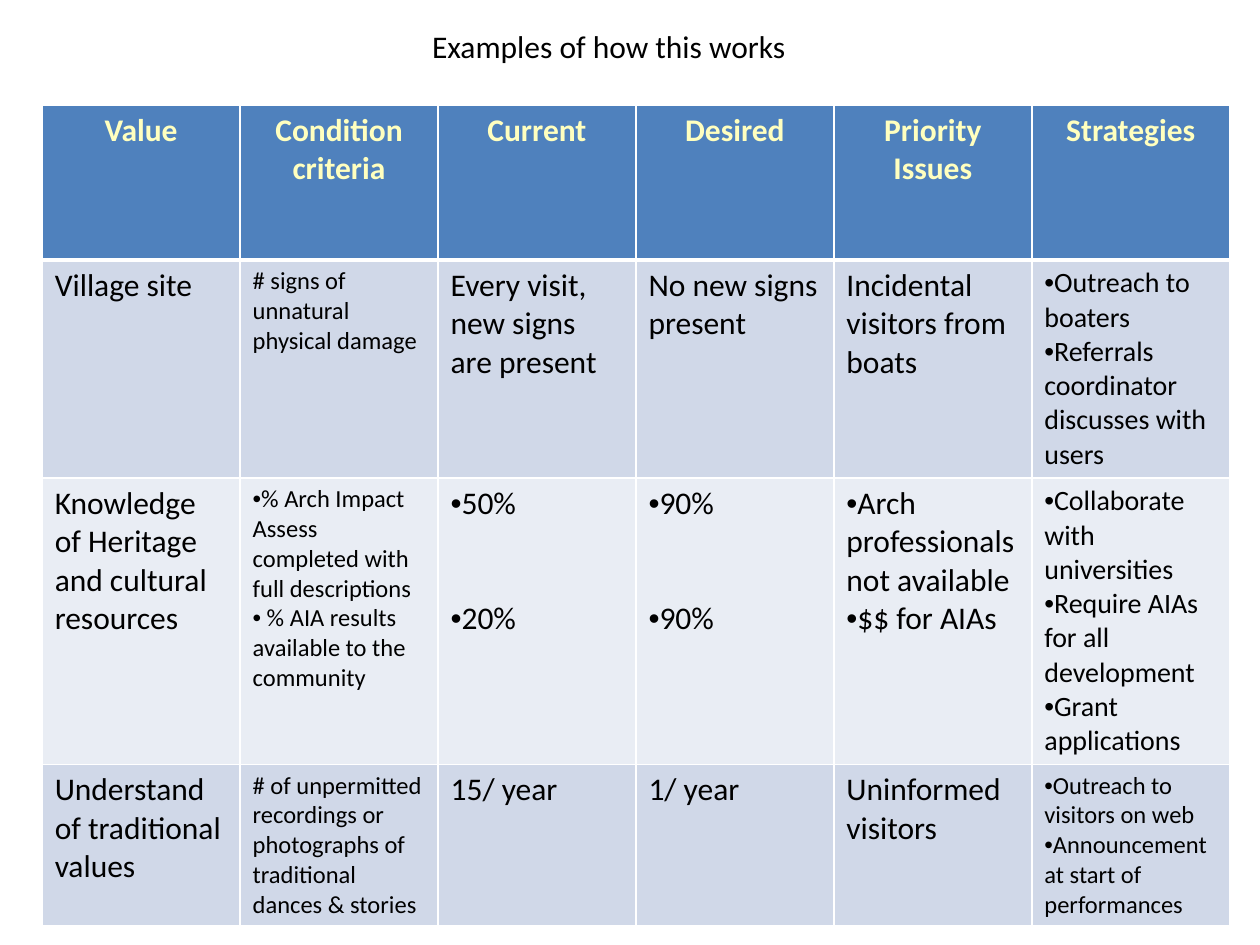
from dataclasses import dataclass

from lxml.etree import SubElement
from pptx import Presentation
from pptx.dml.color import RGBColor as Rgb
from pptx.enum.text import MSO_AUTO_SIZE as AutoSize, PP_ALIGN as Align
from pptx.oxml.ns import qn
from pptx.util import Cm, Pt


@dataclass(frozen=True)
class Theme:
    font: str = "Calibri"
    text: str = "000000"
    page: str = "FFFFFF"
    rule: str = "FFFFFF"
    header_text: str = "FFFFBF"
    header_fill: str = "4F81BD"
    bands: tuple = ("D0D8E8", "E9EDF4")
    size: int = 18
    thin: int = 1
    thick: int = 3
    bullet_gap: int = 44  # two empty lines at the main size


THEME = Theme()

TITLE = "Examples of how this works"
HEADERS = ["Value", "Condition criteria", "Current", "Desired", "Priority Issues", "Strategies"]
# A string is plain text; a list is bulleted.
ROWS = [
    ["Village site",
     "# signs of unnatural physical damage",
     "Every visit, new signs are present",
     "No new signs present",
     "Incidental visitors from boats",
     ["Outreach to boaters", "Referrals coordinator discusses with users"]],
    ["Knowledge of Heritage and cultural resources",
     ["% Arch Impact Assess completed with full descriptions",
      " % AIA results available to the community"],
     ["50%", "20%"],
     ["90%", "90%"],
     ["Arch professionals not available", "$$ for AIAs"],
     ["Collaborate with universities", "Require AIAs for all development",
      "Grant applications"]],
    ["Understand of traditional values",
     "# of unpermitted recordings or photographs of traditional dances & stories",
     "15/ year",
     "1/ year",
     "Uninformed visitors",
     ["Outreach to visitors on web", "Announcement at start of performances"]],
]
CRITERIA, CURRENT, DESIRED, STRATEGIES = 1, 2, 3, 5
CRITERIA_SIZE = 14
STRATEGY_SIZES = [16, 16, 14]

COLUMN_WIDTH = 3.99
ROW_HEIGHTS = [3.12, 2.97, 1.8, 1.8]
TABLE_LEFT, TABLE_TOP, TABLE_HEIGHT = 0.85, 2.12, 16.33


def set_font(paragraph, size, color, bold=False):
    font = paragraph.font
    font.name, font.size, font.bold = THEME.font, Pt(size), bold
    font.color.rgb = Rgb.from_string(color)


def add_bullet(paragraph):
    """Put the bullet directly before the text, with no hanging indent."""
    properties = paragraph._p.get_or_add_pPr()
    properties.set("marL", "0")
    properties.set("indent", "0")
    SubElement(properties, qn("a:buFont"), typeface="Arial")
    SubElement(properties, qn("a:buChar"), char="•")


def style_cell(cell, fill, top, bottom):
    """Draw the four borders, then the fill, in the order the schema asks for."""
    properties = cell._tc.get_or_add_tcPr()
    widths = {"L": THEME.thin, "R": THEME.thin, "T": top, "B": bottom}
    for side, width in widths.items():
        line = SubElement(properties, qn(f"a:ln{side}"), w=str(Pt(width)))
        SubElement(SubElement(line, qn("a:solidFill")), qn("a:srgbClr"), val=THEME.rule)
    cell.fill.solid()
    cell.fill.fore_color.rgb = Rgb.from_string(fill)


def fill_body_cell(cell, content, size, gap):
    bulleted = isinstance(content, list)
    items = content if bulleted else [content]
    cell.text = "\n".join(items)
    for index, paragraph in enumerate(cell.text_frame.paragraphs):
        if index and gap:
            paragraph.space_before = Pt(gap)
        if bulleted:
            add_bullet(paragraph)
        set_font(paragraph, size, THEME.text)


def add_title(page):
    box = page.shapes.add_textbox(Cm(8.46), Cm(0.43), Cm(7.72), Cm(1.02))
    frame = box.text_frame
    frame.word_wrap = False
    frame.auto_size = AutoSize.SHAPE_TO_FIT_TEXT
    frame.text = TITLE
    set_font(frame.paragraphs[0], THEME.size, THEME.text)


def add_values_table(page):
    holder = page.shapes.add_table(
        len(ROWS) + 1, len(HEADERS), Cm(TABLE_LEFT), Cm(TABLE_TOP),
        Cm(COLUMN_WIDTH * len(HEADERS)), Cm(TABLE_HEIGHT))
    table = holder.table
    for column in table.columns:
        column.width = Cm(COLUMN_WIDTH)
    for row, height in zip(table.rows, ROW_HEIGHTS):
        row.height = Cm(height)
    holder.height = Cm(TABLE_HEIGHT)

    for column, header in enumerate(HEADERS):
        cell = table.cell(0, column)
        cell.text = header
        paragraph = cell.text_frame.paragraphs[0]
        paragraph.alignment = Align.CENTER
        set_font(paragraph, THEME.size, THEME.header_text, bold=True)
        style_cell(cell, THEME.header_fill, THEME.thin, THEME.thick)

    for row, contents in enumerate(ROWS):
        sizes = {CRITERIA: CRITERIA_SIZE, STRATEGIES: STRATEGY_SIZES[row]}
        band = THEME.bands[row % len(THEME.bands)]
        top = THEME.thin if row else THEME.thick
        for column, content in enumerate(contents):
            cell = table.cell(row + 1, column)
            gap = THEME.bullet_gap if column in (CURRENT, DESIRED) else 0
            fill_body_cell(cell, content, sizes.get(column, THEME.size), gap)
            style_cell(cell, band, top, THEME.thin)


def main():
    deck = Presentation()
    deck.slide_width, deck.slide_height = Cm(25.4), Cm(19.05)
    page = deck.slides.add_slide(deck.slide_layouts[6])
    page.background.fill.solid()
    page.background.fill.fore_color.rgb = Rgb.from_string(THEME.page)
    add_values_table(page)
    add_title(page)
    deck.save("out.pptx")


if __name__ == "__main__":
    main()
